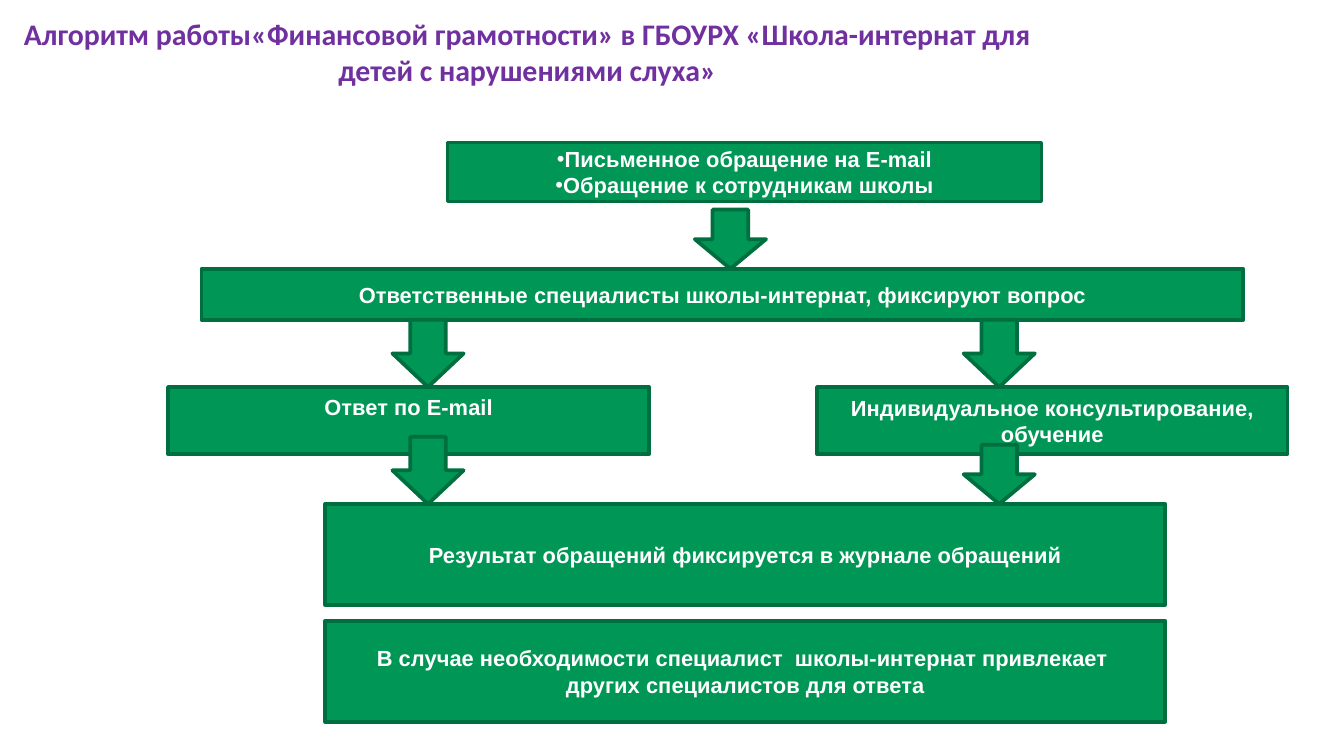
import pptx
import pptx.dml.color
import pptx.enum.shapes
import pptx.enum.text
import pptx.oxml.ns
import pptx.util
from lxml import etree
from pptx.util import Inches

GREEN = pptx.dml.color.RGBColor(0x00, 0x96, 0x55)
DARK_GREEN = pptx.dml.color.RGBColor(0x00, 0x6F, 0x3F)
PURPLE = pptx.dml.color.RGBColor(0x70, 0x30, 0xA0)
WHITE = pptx.dml.color.RGBColor(0xFF, 0xFF, 0xFF)

SHAPE = pptx.enum.shapes.MSO_SHAPE
ANCHOR = pptx.enum.text.MSO_ANCHOR
CENTER = pptx.enum.text.PP_ALIGN.CENTER

TITLE_FONT = {"name": "Calibri", "size": pptx.util.Pt(16), "bold": True}
BOX_FONT = {"name": "Arial", "size": pptx.util.Pt(11.7), "bold": True}
NO_MARGINS = {"margin_left": 0, "margin_top": 0, "margin_right": 0, "margin_bottom": 0}

TITLE = "Алгоритм работы«Финансовой грамотности» в ГБОУРХ «Школа-интернат для детей с нарушениями слуха»"
REQUESTS = ["Письменное обращение на E-mail", "Обращение к сотрудникам школы"]
SPECIALISTS = "Ответственные специалисты школы-интернат, фиксируют вопрос"
REPLY = "Ответ по E-mail"
CONSULTING = "Индивидуальное консультирование, обучение"
RESULT = "Результат обращений фиксируется в журнале обращений"
EXTRA_HELP = "В случае необходимости специалист  школы-интернат привлекает  других специалистов для ответа"

LEFT_ARROW_X, RIGHT_ARROW_X = 2.92, 7.17
ARROW_WIDTH = 0.53


def set_values(obj, values):
    for name, value in values.items():
        setattr(obj, name, value)


def add_bullet(p):
    props = p._p.get_or_add_pPr()
    props.set("marL", "0")
    props.set("indent", "0")
    font = etree.SubElement(props, pptx.oxml.ns.qn("a:buFont"))
    font.set("typeface", "Arial")
    bullet = etree.SubElement(props, pptx.oxml.ns.qn("a:buChar"))
    bullet.set("char", "•")


def write_text(tf, lines, font, color, bulleted=False):
    tf.word_wrap = True
    for i, line in enumerate(lines):
        p = tf.paragraphs[0] if i == 0 else tf.add_paragraph()
        p.alignment = CENTER
        if bulleted:
            add_bullet(p)
        r = p.add_run()
        r.text = line
        set_values(r.font, font)
        r.font.color.rgb = color


def add_title(slide, text, left, top, width, height):
    sp = slide.shapes.add_textbox(Inches(left), Inches(top), Inches(width), Inches(height))
    set_values(sp.text_frame, NO_MARGINS)
    write_text(sp.text_frame, [text], TITLE_FONT, PURPLE)


def add_green_shape(slide, kind, left, top, width, height):
    sp = slide.shapes.add_shape(kind, Inches(left), Inches(top), Inches(width), Inches(height))
    sp.shadow.inherit = False
    sp.fill.solid()
    sp.fill.fore_color.rgb = GREEN
    sp.line.color.rgb = DARK_GREEN
    sp.line.width = pptx.util.Pt(2)
    return sp


def add_box(slide, lines, left, top, width, height, anchor=ANCHOR.MIDDLE, bulleted=False):
    sp = add_green_shape(slide, SHAPE.RECTANGLE, left, top, width, height)
    sp.text_frame.vertical_anchor = anchor
    write_text(sp.text_frame, lines, BOX_FONT, WHITE, bulleted)


def add_arrow(slide, left, top, bottom):
    add_green_shape(slide, SHAPE.DOWN_ARROW, left, top, ARROW_WIDTH, bottom - top)


def main():
    prs = pptx.Presentation()
    prs.slide_width = Inches(10)
    prs.slide_height = prs.slide_width * 9 // 16
    slide = prs.slides.add_slide(prs.slide_layouts[6])

    add_title(slide, TITLE, 0.16, 0.12, 7.53, 0.75)

    add_box(slide, REQUESTS, 3.33, 1.06, 4.42, 0.44, bulleted=True)
    add_box(slide, [SPECIALISTS], 1.5, 2, 7.75, 0.38)
    add_box(slide, [REPLY], 1.25, 2.88, 3.58, 0.5, anchor=ANCHOR.TOP)
    add_box(slide, [CONSULTING], 6.08, 2.88, 3.5, 0.5)
    add_box(slide, [RESULT], 2.42, 3.75, 6.25, 0.75)

    add_arrow(slide, 5.17, 1.56, 2)
    for left in (LEFT_ARROW_X, RIGHT_ARROW_X):
        add_arrow(slide, left, 2.38, 2.88)

    add_box(slide, [EXTRA_HELP], 2.42, 4.62, 6.25, 0.75)

    add_arrow(slide, LEFT_ARROW_X, 3.25, 3.75)
    add_arrow(slide, RIGHT_ARROW_X, 3.31, 3.75)

    prs.save("out.pptx")


if __name__ == "__main__":
    main()
